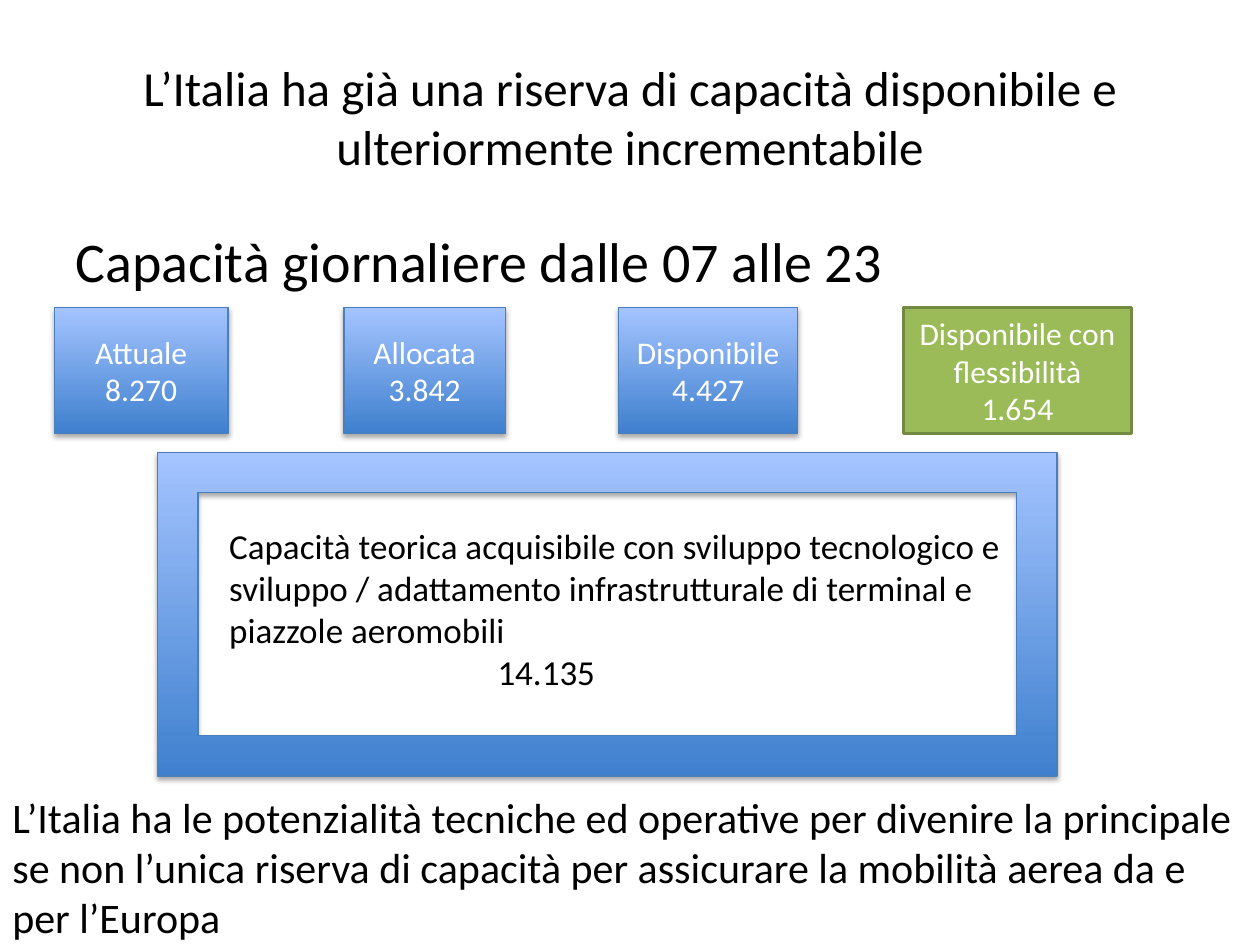
import pptx
import pptx.dml.color
import pptx.enum.shapes
import pptx.enum.text
import pptx.oxml
import pptx.oxml.ns
import pptx.util
from pptx.util import Inches, Pt

ALIGN = pptx.enum.text.PP_ALIGN
ANCHOR = pptx.enum.text.MSO_ANCHOR
SHAPE = pptx.enum.shapes.MSO_SHAPE

COLORS = {
    "text": "000000", "box_text": "FFFFFF",
    "blue_bottom": "3F80CE", "blue_top": "A4C4FF", "blue_line": "4B7EBC",
    "green": "9BBB59", "green_line": "738A42",
}
TITLE = "L’Italia ha già una riserva di capacità disponibile e ulteriormente incrementabile"
SUBTITLE = "Capacità giornaliere dalle 07 alle 23"
# label, value, left, width, highlighted
CAPACITIES = [
    ("Attuale", "8.270", 0.43, 1.38, False),
    ("Allocata", "3.842", 2.73, 1.28, False),
    ("Disponibile", "4.427", 4.91, 1.42, False),
    ("Disponibile con flessibilità", "1.654", 7.17, 1.81, True),
]
BOX_TOP, BOX_HEIGHT = 2.44, 1
THEORETICAL = [
    "Capacità teorica acquisibile con sviluppo tecnologico e",
    "sviluppo / adattamento infrastrutturale di terminal e",
    "piazzole aeromobili",
    "14.135",
]
VALUE_INDENT = 2.13
CONCLUSION = [
    "L’Italia ha le potenzialità tecniche ed operative per divenire la principale",
    "se non l’unica riserva di capacità per assicurare la mobilità aerea da e",
    "per l’Europa",
]
SHADOW = (
    f'<a:outerShdw {pptx.oxml.ns.nsdecls("a")} blurRad="{Pt(3.1)}" dist="{Pt(1.8)}" '
    'dir="5400000" rotWithShape="0"><a:srgbClr val="000000">'
    '<a:alpha val="35000"/></a:srgbClr></a:outerShdw>'
)


def color(name):
    return pptx.dml.color.RGBColor.from_string(COLORS[name])


def write(shape, lines, size, color_name, alignment):
    frame = shape.text_frame
    frame.word_wrap = True
    frame.text = "\n".join(lines)
    for paragraph in frame.paragraphs:
        paragraph.alignment = alignment
        paragraph.font.size = Pt(size)
        paragraph.font.name = "Calibri"
        paragraph.font.color.rgb = color(color_name)
    return frame


def place(shape, left, top, width, height):
    shape.left, shape.top = Inches(left), Inches(top)
    shape.width, shape.height = Inches(width), Inches(height)


def set_indent(paragraph, left):
    properties = paragraph._p.get_or_add_pPr()
    properties.set("marL", str(Inches(left)))
    properties.set("indent", "0")
    return properties


def add_box(slide, kind, left, top, width, height, highlighted=False):
    """Add a flat green box when highlighted, else a shaded blue one."""
    shape = slide.shapes.add_shape(
        kind, Inches(left), Inches(top), Inches(width), Inches(height))
    shape.shadow.inherit = False
    if highlighted:
        shape.fill.solid()
        shape.fill.fore_color.rgb = color("green")
    else:
        shape.fill.gradient()
        shape.fill.gradient_angle = 90
        for stop, name in zip(shape.fill.gradient_stops, ("blue_bottom", "blue_top")):
            stop.color.rgb = color(name)
        effects = shape._element.spPr.find(pptx.oxml.ns.qn("a:effectLst"))
        effects.append(pptx.oxml.parse_xml(SHADOW))
    shape.line.color.rgb = color("green_line" if highlighted else "blue_line")
    shape.line.width = Pt(2 if highlighted else 0.75)
    return shape


def add_text(slide, lines, left, top, width, height, size, alignment):
    box = slide.shapes.add_textbox(
        Inches(left), Inches(top), Inches(width), Inches(height))
    return write(box, lines, size, "text", alignment)


def main():
    presentation = pptx.Presentation()
    presentation.slide_width, presentation.slide_height = Inches(10), Inches(7.5)
    slide = presentation.slides.add_slide(presentation.slide_layouts[1])

    title, body = slide.placeholders
    place(title, 0.5, 0.3, 9, 1.25)
    write(title, [TITLE], 28, "text", ALIGN.CENTER).vertical_anchor = ANCHOR.MIDDLE
    place(body, 0.5, 1.75, 9, 4.95)
    subtitle = write(body, [SUBTITLE], 32, "text", ALIGN.LEFT).paragraphs[0]
    properties = set_indent(subtitle, 0)
    pptx.oxml.ns.qn("a:buNone")
    properties.insert_element_before(
        pptx.oxml.parse_xml(f'<a:buNone {pptx.oxml.ns.nsdecls("a")}/>'), "a:defRPr")

    for label, value, left, width, highlighted in CAPACITIES:
        box = add_box(slide, SHAPE.RECTANGLE, left, BOX_TOP, width, BOX_HEIGHT, highlighted)
        frame = write(box, [label, value], 18, "box_text", ALIGN.CENTER)
        frame.vertical_anchor = ANCHOR.MIDDLE

    add_box(slide, SHAPE.FRAME, 1.25, 3.59, 7.14, 2.57)
    theoretical = add_text(slide, THEORETICAL, 1.72, 4.11, 6.39, 1.45, 20, ALIGN.LEFT)
    set_indent(theoretical.paragraphs[-1], VALUE_INDENT)
    add_text(slide, CONCLUSION, 0, 6.23, 10.04, 1.31, 24, ALIGN.JUSTIFY)

    presentation.save("out.pptx")


if __name__ == "__main__":
    main()
